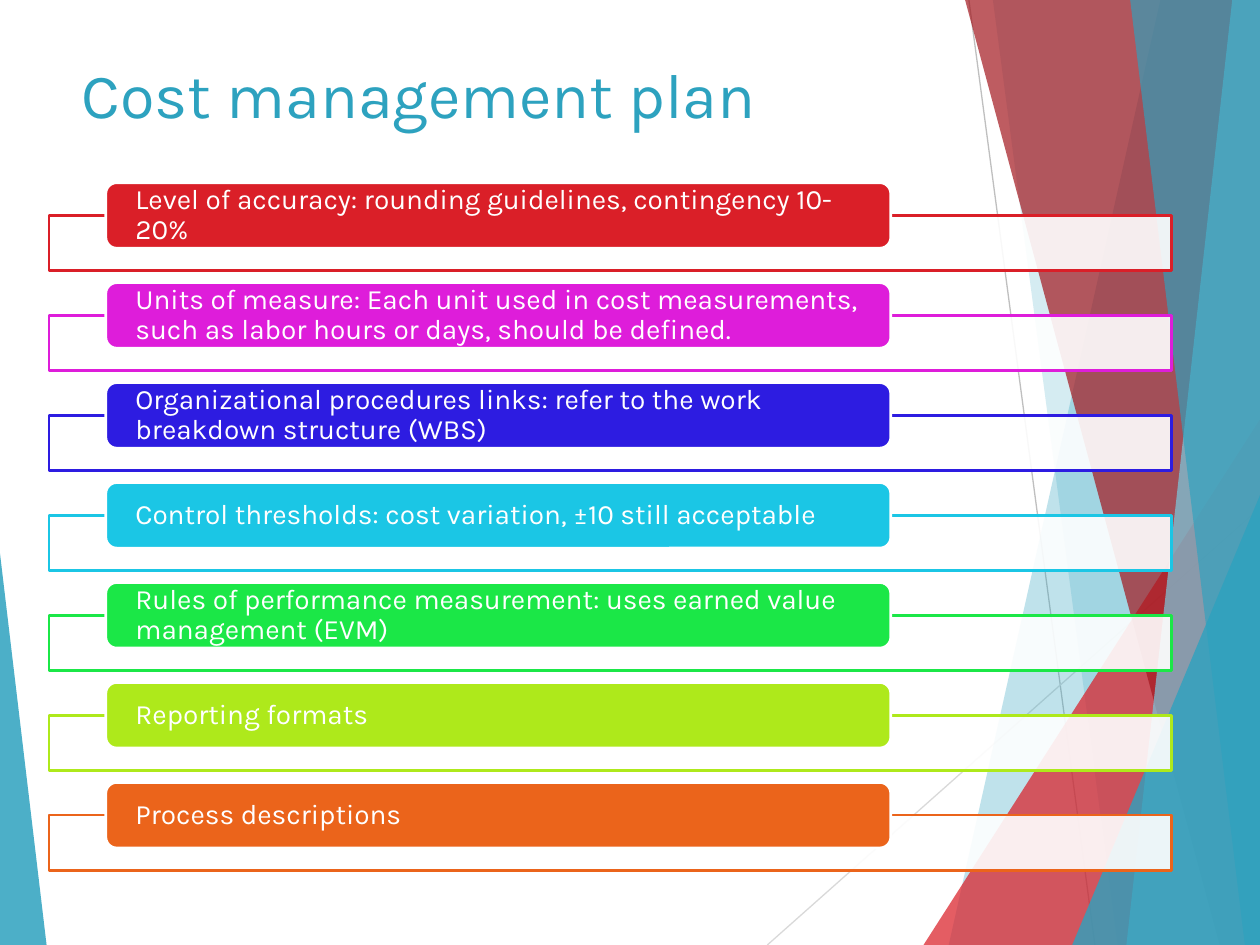
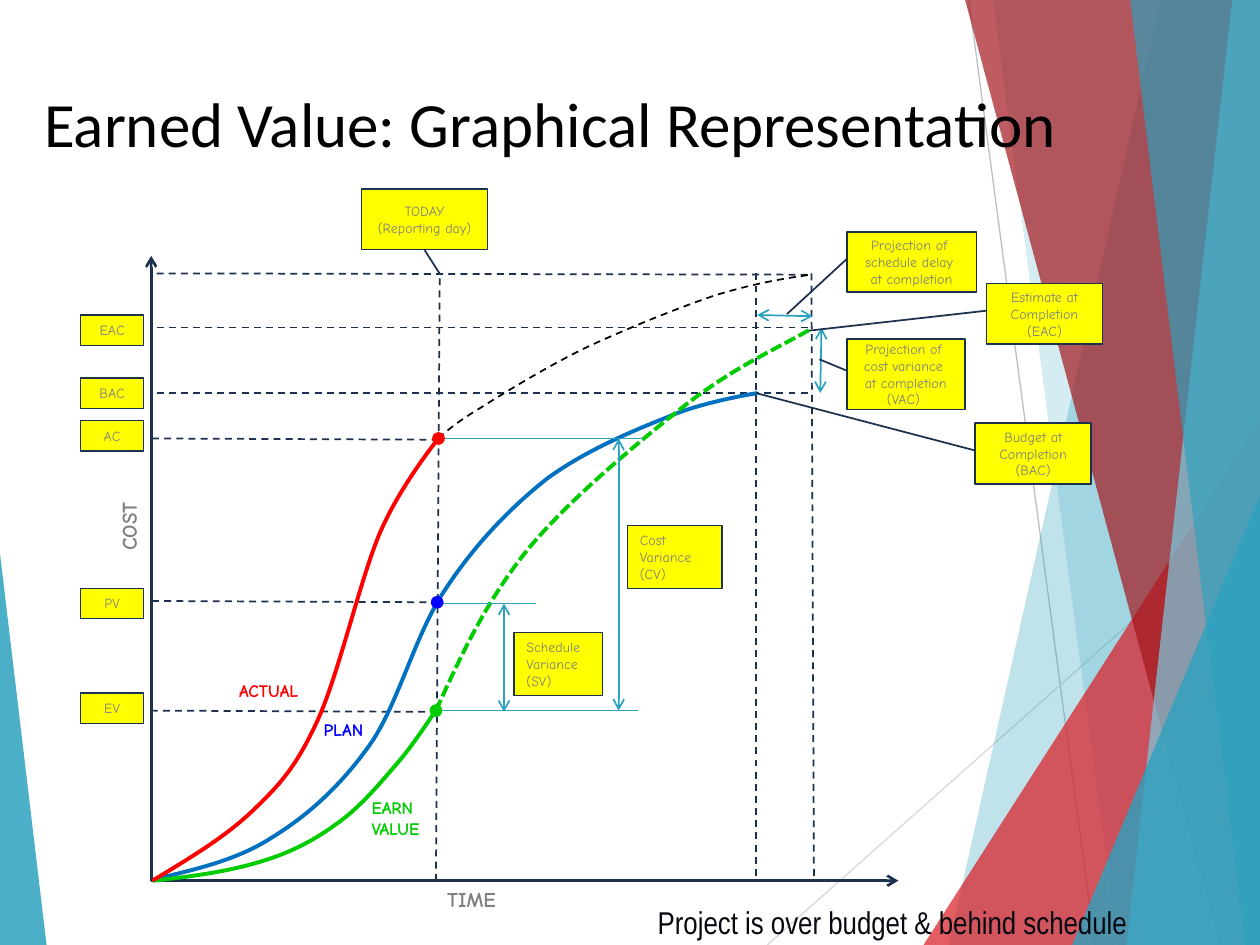
"""Build two cost management slides: the plan and the earned value graph."""
from dataclasses import dataclass
from typing import Any, Optional

from lxml.etree import SubElement
from pptx import Presentation
from pptx.dml.color import RGBColor
from pptx.enum.dml import MSO_LINE as Dash
from pptx.enum.shapes import MSO_CONNECTOR, MSO_SHAPE as Shape
from pptx.enum.text import MSO_ANCHOR as Anchor, PP_ALIGN as Align
from pptx.oxml.ns import qn
from pptx.util import Inches, Pt

TEAL, RED, WHITE, BLACK = "2DA2BF", "DA1F28", "FFFFFF", "000000"
NAVY, GREY, YELLOW = "1C314E", "808080", "FFFF00"
PLAN_BLUE, MARK_BLUE, EARN_GREEN, ACTUAL_RED = "0070C0", "0000FF", "00CC00", "FF0000"
BODY_FONT, GRAPH_FONT = "Karla", "Comic Neue"
LABEL_FORMAT = {"name": GRAPH_FONT, "size": Pt(8)}
Point = tuple[float, float]
Box = tuple[float, float, float, float]


@dataclass
class Facet:
    """A translucent polygon of the backdrop."""
    points: list[Point]
    color: str
    alpha: int


@dataclass
class Wedge:
    """A translucent right triangle of the backdrop."""
    box: Box
    apex: float
    color: str
    alpha: int


@dataclass
class Curve:
    """A chain of cubic Bezier segments: a start, then three points for each."""
    points: list[Point]
    color: str
    width: float = 2.25
    dash: Optional[Dash] = None


@dataclass
class Callout:
    """A yellow note with a leader line."""
    box: Box
    leader: tuple[float, float, float, float]
    lines: tuple[str, ...]


@dataclass
class Label:
    """A bold text of the graph."""
    box: Box
    lines: tuple[str, ...]
    color: str
    size: int = 10
    rotation: int = 0


BACKDROP_LINES = [((7.69, 0), (8.69, 7.5), "BFBFBF"), ((10, 4.03), (6.09, 7.5), "D9D9D9")]
BACKDROP = [
    Facet([(9.21, 0), (10, 0), (10, 7.5), (7.53, 7.5)], TEAL, 30),
    Facet([(7.88, 0), (10, 0), (10, 7.5), (8.87, 7.5)], TEAL, 20),
    Wedge((7.33, 3.33, 2.67, 4.17), 1, RED, 72),
    Facet([(7.66, 0), (10, 0), (10, 7.5), (9.68, 7.5)], "A3171E", 70),
    Facet([(9.78, 0), (10, 0), (10, 7.5), (8.94, 7.5)], "7ACBE0", 70),
    Facet([(8.97, 0), (10, 0), (10, 7.5), (9.88, 7.5)], TEAL, 65),
    Wedge((8.51, 3.93, 1.49, 3.57), 1, TEAL, 80),
    Wedge((0, 4.39, 0.37, 3.11), 0, TEAL, 85),
]
PLAN_ITEMS = [
    ("Level of accuracy: rounding guidelines, contingency 10-20%", RED),
    ("Units of measure: Each unit used in cost measurements, such as labor hours or days, "
     "should be defined.", "DE1DDA"),
    ("Organizational procedures links: refer to the work breakdown structure (WBS)", "2D1CE1"),
    ("Control thresholds: cost variation, ±10 still acceptable", "1BC6E5"),
    ("Rules of performance measurement: uses earned value management (EVM)", "1BE747"),
    ("Reporting formats", "AEE91B"),
    ("Process descriptions", "EB641B"),
]
AXES = [((1.2, 6.99), (7.13, 6.99)), ((1.2, 6.99), (1.2, 2.03))]
GUIDES = [
    ((3.46, 6.99), (3.49, 2.17)), ((6, 2.17), (6, 6.99)), ((6.44, 2.17), (6.46, 6.98)),
    ((6.41, 2.18), (1.2, 2.17)), ((6.41, 2.6), (1.19, 2.6)), ((6.41, 3.12), (1.2, 3.12)),
    ((3.48, 3.49), (1.2, 3.48)), ((3.48, 4.78), (1.2, 4.77)), ((3.47, 5.65), (1.19, 5.64)),
]
CURVES = [
    Curve([(1.22, 6.98), (1.55, 6.9), (1.88, 6.83), (2.17, 6.64), (2.46, 6.46), (2.72, 6.22),
           (2.95, 5.89), (3.17, 5.56), (3.3, 5.02), (3.54, 4.67), (3.77, 4.32), (4.05, 4.03),
           (4.34, 3.8), (4.64, 3.58), (5.02, 3.42), (5.3, 3.31), (5.57, 3.19), (6.01, 3.12),
           (6.01, 3.12)], PLAN_BLUE),
    Curve([(1.21, 6.99), (1.5, 6.96), (1.79, 6.92), (2.03, 6.85), (2.28, 6.78), (2.48, 6.68),
           (2.67, 6.54), (2.86, 6.41), (3.03, 6.2), (3.16, 6.05), (3.29, 5.9), (3.45, 5.65),
           (3.45, 5.65)], EARN_GREEN),
    Curve([(3.46, 5.64), (3.66, 5.2), (3.86, 4.77), (4.19, 4.36), (4.53, 3.95), (5.09, 3.49),
           (5.46, 3.2), (5.84, 2.91), (6.14, 2.78), (6.44, 2.61)],
          EARN_GREEN, dash=Dash.SQUARE_DOT),
    Curve([(1.21, 6.99), (1.49, 6.82), (1.78, 6.65), (2, 6.44), (2.22, 6.23), (2.35, 6.09),
           (2.52, 5.72), (2.69, 5.35), (2.86, 4.59), (3.02, 4.22), (3.18, 3.85), (3.48, 3.48),
           (3.48, 3.48)], ACTUAL_RED),
    Curve([(3.48, 3.48), (3.55, 3.42), (3.61, 3.36), (3.81, 3.24), (4, 3.12), (4.34, 2.91),
           (4.65, 2.76), (4.97, 2.61), (5.39, 2.44), (5.69, 2.34), (5.99, 2.25), (6.22, 2.21),
           (6.44, 2.18)], BLACK, 1, Dash.DASH),
]
VARIANCE_LEVELS = [((3.48, 4.79), (4.25, 4.79)), ((3.47, 5.64), (5.06, 5.64)),
                   ((3.48, 3.48), (5.1, 3.48))]
VARIANCE_SPANS = [((6.01, 2.5), (6.45, 2.51)), ((6.52, 2.6), (6.51, 3.12)),
                  ((4, 4.79), (4, 5.65)), ((4.91, 3.48), (4.91, 5.64))]
CALLOUTS = [
    Callout((7.83, 2.25, 0.92, 0.48), (0.45, 0, 0.78, -1.53),
            ("Estimate at Completion", "(EAC)")),
    Callout((7.74, 3.36, 0.92, 0.48), (0.45, 0, -0.5, -1.89),
            ("Budget at Completion", "(BAC)")),
    Callout((6.72, 1.84, 1.03, 0.48), (0.45, 0, 1.36, -0.46),
            ("Projection of ", "schedule delay ", "at completion")),
    Callout((6.72, 2.69, 0.94, 0.56), (0.45, 0, 0.29, -0.23),
            ("Projection of ", "cost variance ", "at completion", "(VAC) ")),
    Callout((2.87, 1.5, 1, 0.48), (1.01, 0.5, 1.4, 0.62), ("TODAY", "(Reporting day)")),
]
VARIANCE_NOTES = [((4.08, 5.02, 0.7, 0.5), ("Schedule", "Variance (SV)")),
                  ((4.98, 4.17, 0.75, 0.5), ("Cost", "Variance", "(CV)"))]
COST_LEVELS = [("EAC", 2.5), ("BAC", 3), ("AC", 3.34), ("PV", 4.67), ("EV", 5.5)]
LABELS = [
    Label((3.45, 6.99, 0.82, 0.3), ("TIME",), GREY, 12),
    Label((0.66, 3.96, 0.72, 0.3), ("COST",), GREY, 12, 270),
    Label((1.8, 5.35, 0.78, 0.27), ("ACTUAL",), ACTUAL_RED),
    Label((2.47, 5.66, 0.63, 0.27), ("PLAN",), MARK_BLUE),
    Label((2.85, 6.28, 1.02, 0.44), ("EARN", "VALUE"), EARN_GREEN),
]
MARKERS = [(3.47, 4.78, MARK_BLUE), (3.46, 5.64, EARN_GREEN), (3.48, 3.48, ACTUAL_RED)]


def rgb(color: str) -> RGBColor:
    """Turn a hex string into a colour."""
    return RGBColor.from_string(color)


def apply_format(obj: Any, values: dict[str, Any]) -> None:
    """Set each named attribute of an object."""
    for name, value in values.items():
        setattr(obj, name, value)


def paint(sp: Any, fill: Optional[str] = None, line: Optional[str] = None,
          width: float = 1, alpha: int = 100) -> None:
    """Give a shape its fill and outline, without a shadow."""
    sp.shadow.inherit = False
    if fill:
        sp.fill.solid()
        sp.fill.fore_color.rgb = rgb(fill)
        if alpha < 100:
            clr = sp.element.spPr.find(f"{qn('a:solidFill')}/{qn('a:srgbClr')}")
            SubElement(clr, qn("a:alpha")).set("val", str(alpha * 1000))
    else:
        sp.fill.background()
    if line:
        sp.line.color.rgb = rgb(line)
        sp.line.width = Pt(width)
    else:
        sp.line.fill.background()


def add_preset(slide: Any, kind: Shape, box: Box, **look: Any) -> Any:
    """Add a painted preset shape."""
    sp = slide.shapes.add_shape(kind, *map(Inches, box))
    paint(sp, **look)
    return sp


def write(sp: Any, lines: tuple[str, ...], color: str, font: dict[str, Any],
          frame: Optional[dict[str, Any]] = None, para: Optional[dict[str, Any]] = None) -> None:
    """Write one paragraph for each line, in one format."""
    tf = sp.text_frame
    apply_format(tf, {"word_wrap": True, "vertical_anchor": Anchor.TOP} | (frame or {}))
    for i, line in enumerate(lines):
        p = tf.add_paragraph() if i else tf.paragraphs[0]
        apply_format(p, {"alignment": Align.LEFT} | (para or {}))
        r = p.add_run()
        r.text = line
        apply_format(r.font, font)
        r.font.color.rgb = rgb(color)


def add_line(slide: Any, start: Point, end: Point, color: str, width: float = 1,
             dash: Optional[Dash] = None, arrows: tuple[str, ...] = ()) -> Any:
    """Add a straight line, with arrowheads at the named ends."""
    cx = slide.shapes.add_connector(MSO_CONNECTOR.STRAIGHT, *map(Inches, start + end))
    cx.line.color.rgb = rgb(color)
    apply_format(cx.line, {"width": Pt(width), "dash_style": dash})
    spPr = cx.element.spPr
    for end_name in arrows:
        SubElement(spPr.find(qn("a:ln")), qn(f"a:{end_name}")).set("type", "arrow")
    SubElement(spPr, qn("a:effectLst"))
    return cx


def add_outline(slide: Any, points: list[Point], close: bool) -> Any:
    """Add a freeform through the points."""
    start, *rest = [(Inches(x), Inches(y)) for x, y in points]
    builder = slide.shapes.build_freeform(*start)
    builder.add_line_segments(rest, close=close)
    return builder.convert_to_shape()


def add_curve(slide: Any, curve: Curve) -> None:
    """Add an open outline and bend each three segments into one Bezier."""
    sp = add_outline(slide, curve.points, False)
    outline = next(sp.element.iter(qn("a:path")))
    segments = outline.findall(qn("a:lnTo"))
    for i in range(0, len(segments), 3):
        bezier = SubElement(outline, qn("a:cubicBezTo"))
        for segment in segments[i:i + 3]:
            bezier.append(segment[0])
            outline.remove(segment)
    paint(sp, line=curve.color, width=curve.width)
    sp.line.dash_style = curve.dash


def add_backdrop(slide: Any) -> None:
    """Draw the facets and keep them on the layout that the slides share."""
    shapes = [add_line(slide, start, end, color, 0.75) for start, end, color in BACKDROP_LINES]
    for part in BACKDROP:
        if isinstance(part, Facet):
            sp = add_outline(slide, part.points, True)
            paint(sp, part.color, alpha=part.alpha)
        else:
            sp = add_preset(slide, Shape.ISOSCELES_TRIANGLE, part.box,
                            fill=part.color, alpha=part.alpha)
            sp.adjustments[0] = part.apex
        shapes.append(sp)
    tree = slide.slide_layout.shapes.element
    for sp in shapes:
        tree.append(sp.element)
    for number, props in enumerate(tree.iter(qn("p:cNvPr")), 1):
        props.set("id", str(number))


def set_title(slide: Any, text: str, box: Box, font: str, color: str) -> None:
    """Place and format the title."""
    title = slide.shapes.title
    apply_format(title, dict(zip(("left", "top", "width", "height"), map(Inches, box))))
    write(title, (text,), color, {"name": font, "size": Pt(36)}, {"margin_top": Inches(0.05)})


def build_plan(slide: Any) -> None:
    """Draw the list of plan components."""
    set_title(slide, "Cost management plan", (0.55, 0.39, 7.05, 1.05), BODY_FONT, TEAL)
    frame = {"vertical_anchor": Anchor.MIDDLE, "margin_left": Inches(0.21),
             "margin_right": Inches(0.21), "margin_top": 0, "margin_bottom": 0}
    for i, (text, color) in enumerate(PLAN_ITEMS):
        top = 1.45 + i * 4.76 / 6
        add_preset(slide, Shape.RECTANGLE, (0.39, top + 0.26, 8.91, 0.44),
                   fill=WHITE, alpha=90, line=color, width=1.5)
        bar = add_preset(slide, Shape.ROUNDED_RECTANGLE, (0.84, top, 6.23, 0.52),
                         fill=color, line=WHITE, width=1.5)
        write(bar, (text,), WHITE, {"name": BODY_FONT, "size": Pt(16)}, frame,
              {"line_spacing": 0.9})


def build_graph(slide: Any) -> None:
    """Draw the earned value graph."""
    set_title(slide, "Earned Value: Graphical Representation", (0.25, 0.62, 8.33, 0.5),
              "Calibri", BLACK)
    for start, end in AXES:
        add_line(slide, start, end, NAVY, 1.5, arrows=("tailEnd",))
    for start, end in GUIDES:
        add_line(slide, start, end, NAVY, dash=Dash.DASH)
    for curve in CURVES:
        add_curve(slide, curve)
    for start, end in VARIANCE_LEVELS:
        add_line(slide, start, end, TEAL)
    for start, end in VARIANCE_SPANS:
        add_line(slide, start, end, TEAL, arrows=("headEnd", "tailEnd"))
    for note in CALLOUTS:
        sp = add_preset(slide, Shape.LINE_CALLOUT_1, note.box, fill=YELLOW, line=NAVY)
        for i, value in enumerate(note.leader):
            sp.adjustments[i] = value
        write(sp, note.lines, GREY, LABEL_FORMAT, {"vertical_anchor": Anchor.MIDDLE},
              {"alignment": Align.CENTER})
    levels = [((0.64, top, 0.5, 0.24), (name,)) for name, top in COST_LEVELS]
    for notes, align in ((VARIANCE_NOTES, Align.LEFT), (levels, Align.CENTER)):
        for box, lines in notes:
            sp = add_preset(slide, Shape.RECTANGLE, box, fill=YELLOW, line=NAVY, width=0.75)
            write(sp, lines, GREY, LABEL_FORMAT, para={"alignment": align})
    for label in LABELS:
        sp = slide.shapes.add_textbox(*map(Inches, label.box))
        sp.rotation = label.rotation
        write(sp, label.lines, label.color,
              {"name": GRAPH_FONT, "size": Pt(label.size), "bold": True})
    for x, y, color in MARKERS:
        add_preset(slide, Shape.OVAL, (x - 0.04, y - 0.04, 0.08, 0.08),
                   fill=color, line=color, width=1.5)
    caption = slide.shapes.add_textbox(*map(Inches, (4.75, 7.12, 4.42, 0.42)))
    write(caption, ("Project is over budget & behind schedule",), "060A10",
          {"name": "Arial Narrow", "size": Pt(18)}, {"margin_left": Inches(0.47)},
          {"space_before": Pt(3.6)})


def main() -> None:
    """Build and save the presentation."""
    prs = Presentation()
    prs.slide_width, prs.slide_height = Inches(10), Inches(7.5)
    plan, graph = (prs.slides.add_slide(prs.slide_layouts[5]) for _ in range(2))
    add_backdrop(plan)
    build_plan(plan)
    build_graph(graph)
    prs.save("out.pptx")


if __name__ == "__main__":
    main()
